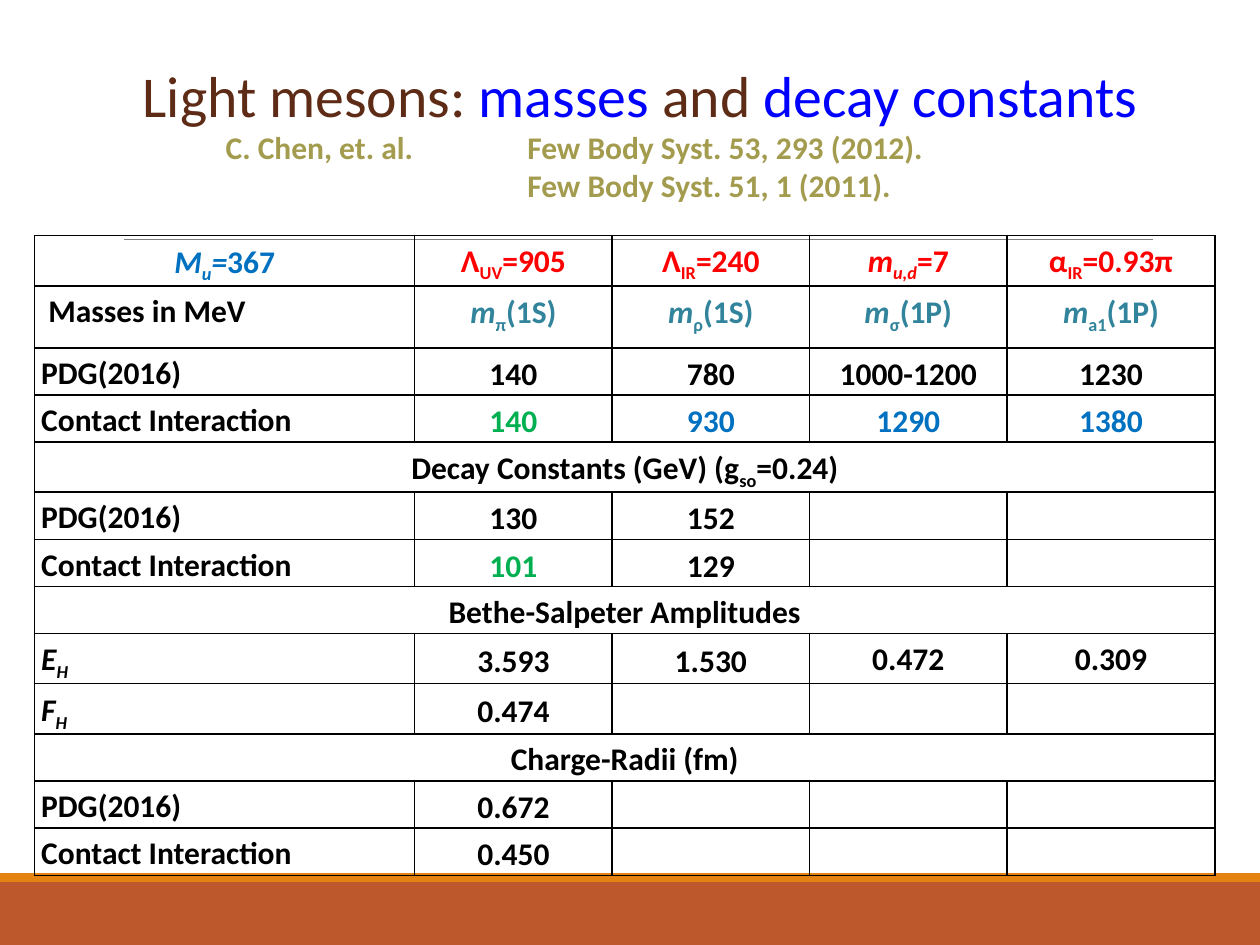
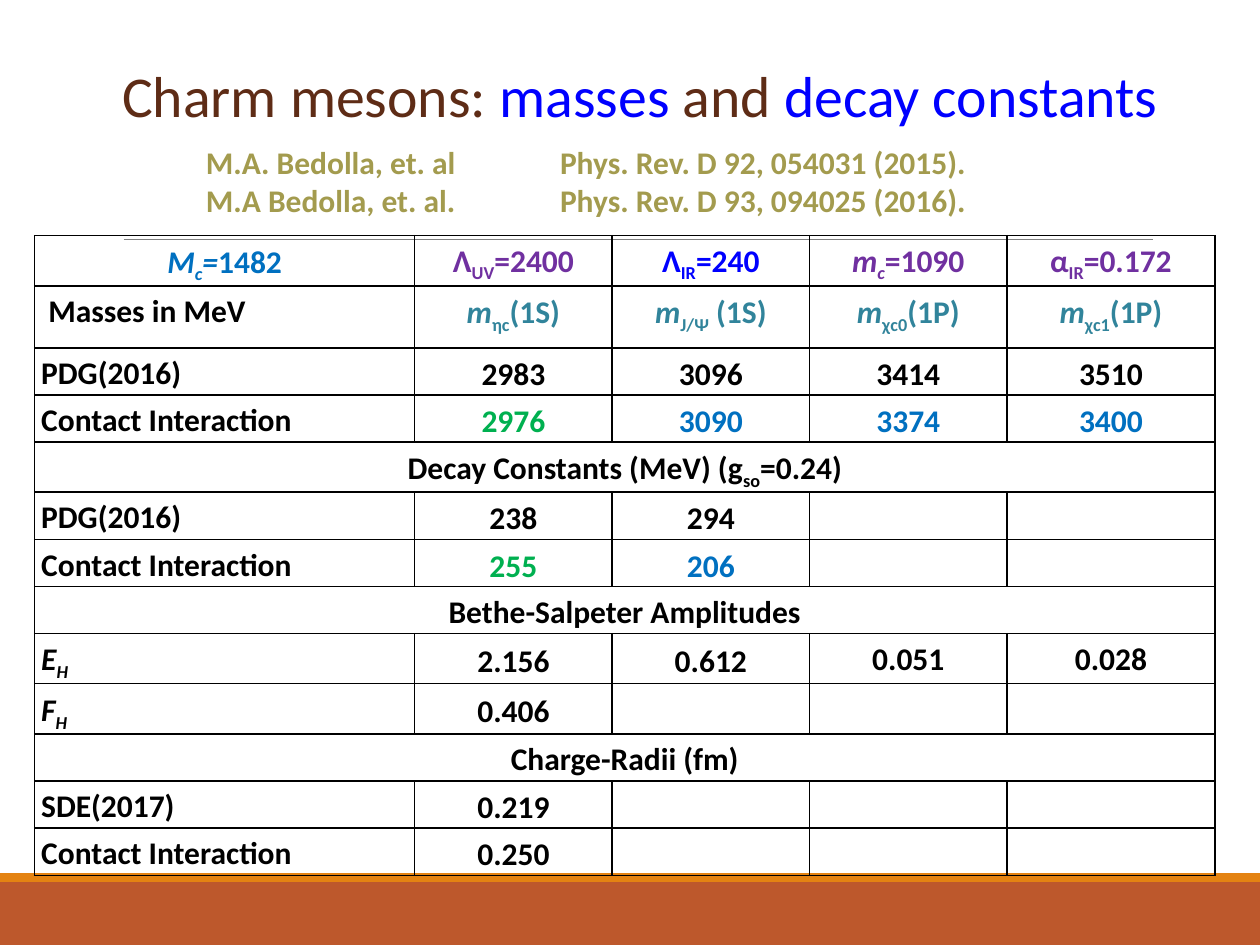
from lxml import etree
from pptx import Presentation
from pptx import util as u
from pptx.dml.color import RGBColor
from pptx.enum import shapes, text
from pptx.oxml.ns import qn

FONT = "Calibri"
BLACK, GREEN, BLUE, TEAL = "000000", "00B050", "0070C0", "31849B"
RED, PURPLE, PURE_BLUE = "FF0000", "7030A0", "0000FF"
BROWN, OLIVE, RUST, ORANGE, GRAY = "5E2C16", "A39B4E", "BD582C", "E48312", "808080"

BANDS = [(17.78, 1.27, RUST), (17.6, 0.18, ORANGE)]
COLS = [7.66, 3.98, 3.98, 3.98, 4.19]
ROWS = [0.99, 1.25] + [0.95] * 11
PARAMETERS, STATES, AMPLITUDES = 0, 1, 8

SLIDES = [
    {
        "family": "Light",
        "references": ["C. Chen, et. al.\tFew Body Syst. 53, 293 (2012).",
                       "\tFew Body Syst. 51, 1 (2011)."],
        "reference_box": (4.3, 2.46, 20.8, 2.57),
        "reference_tab": 6.08,
        "colours": {0: [BLUE, RED, RED, RED, RED],
                    3: [BLACK, GREEN, BLUE, BLUE, BLUE],
                    6: [BLACK, GREEN, BLACK]},
        "rows": [
            ["~M|u|=~367", "Λ|UV|=905", "Λ|IR|=240", "~m|u,d|~=7", "α|IR|=0.93π"],
            [" Masses in MeV", "~m~|π|(1S)", "~m~|ρ|(1S)", "~m~|σ|(1P)", "~m~|a1|(1P)"],
            ["PDG(2016)", "140", "780", "1000-1200", "1230"],
            ["Contact Interaction", "140", "930", "1290", "1380"],
            ["Decay Constants (GeV) (g|so|=0.24)"],
            ["PDG(2016)", "130", "152"],
            ["Contact Interaction", "101", "129"],
            ["Bethe-Salpeter Amplitudes"],
            ["~E|H|", "3.593", "1.530", "0.472", "0.309"],
            ["~F|H|", "0.474"],
            ["Charge-Radii (fm)"],
            ["PDG(2016)", "0.672"],
            ["Contact Interaction", "0.450"],
        ],
    },
    {
        "family": "Charm",
        "references": ["M.A. Bedolla, et. al\tPhys. Rev. D 92, 054031 (2015).",
                       "M.A Bedolla, et. al.\tPhys. Rev. D 93, 094025 (2016)."],
        "reference_box": (3.9, 2.76, 21.2, 2.57),
        "reference_tab": 7.14,
        "colours": {0: [BLUE, PURPLE, PURE_BLUE, PURPLE, PURPLE],
                    3: [BLACK, GREEN, BLUE, BLUE, BLUE],
                    6: [BLACK, GREEN, BLUE]},
        "rows": [
            ["~M|c|=~1482", "Λ|UV|=2400", "Λ|IR|=240", "~m|c|~=1090", "α|IR|=0.172"],
            [" Masses in MeV", "~m~|ηc|(1S)", "~m~|J/Ψ| (1S)", "~m~|χc0|(1P)",
             "~m~|χc1|(1P)"],
            ["PDG(2016)", "2983", "3096", "3414", "3510"],
            ["Contact Interaction", "2976", "3090", "3374", "3400"],
            ["Decay Constants (MeV) (g|so|=0.24)"],
            ["PDG(2016)", "238", "294"],
            ["Contact Interaction", "255", "206"],
            ["Bethe-Salpeter Amplitudes"],
            ["~E|H|", "2.156", "0.612", "0.051", "0.028"],
            ["~F|H|", "0.406"],
            ["Charge-Radii (fm)"],
            ["SDE(2017)", "0.219"],
            ["Contact Interaction", "0.250"],
        ],
    },
]


def rgb(colour):
    return RGBColor.from_string(colour)


def cm(*values):
    return [u.Cm(v) for v in values]


def add_run(p, content, size, colour, bold=False):
    r = p.add_run()
    r.text = content
    r.font.name, r.font.size, r.font.bold = FONT, u.Pt(size), bold
    r.font.color.rgb = rgb(colour)
    return r


def add_marked_runs(p, content, colour):
    italic = False
    for i, level_part in enumerate(content.split("|")):
        for j, piece in enumerate(level_part.split("~")):
            if j:
                italic = not italic
            if piece:
                r = add_run(p, piece, 18, colour, True)
                if italic:
                    r.font.italic = True
                if i % 2:
                    r.font._element.set("baseline", "-25000")


def add_frame(s):
    for top, height, colour in BANDS:
        sp = s.shapes.add_shape(shapes.MSO_SHAPE.RECTANGLE, *cm(0, top, 25.4, height))
        sp.shadow.inherit = False
        sp.fill.solid()
        sp.fill.fore_color.rgb = rgb(colour)
        sp.line.fill.background()
    rule = s.shapes.add_connector(shapes.MSO_CONNECTOR.STRAIGHT, *cm(2.49, 4.83, 23.25, 4.83))
    rule.line.color.rgb = rgb(GRAY)
    rule.line.width = u.Pt(0.5)
    etree.SubElement(rule._element.spPr, qn("a:effectLst"))


def add_text_box(s, box):
    tf = s.shapes.add_textbox(*cm(*box)).text_frame
    tf.word_wrap = True
    return tf


def add_title(s, family):
    tf = add_text_box(s, (1.05, 0.61, 23.7, 2.11))
    tf.vertical_anchor = text.MSO_ANCHOR.BOTTOM
    p = tf.paragraphs[0]
    p.alignment = text.PP_ALIGN.CENTER
    for content, colour in [(f"{family} mesons: ", BROWN), ("masses", PURE_BLUE),
                            (" and ", BROWN), ("decay constants", PURE_BLUE)]:
        add_run(p, content, 33, colour)


def add_references(s, lines, box, tab):
    tf = add_text_box(s, box)
    for i, line in enumerate(lines):
        p = tf.add_paragraph() if i else tf.paragraphs[0]
        tabs = etree.SubElement(p._p.get_or_add_pPr(), qn("a:tabLst"))
        etree.SubElement(tabs, qn("a:tab"), pos=str(u.Cm(tab)), algn="l")
        add_run(p, line, 18, OLIVE, True)


def set_borders(cell):
    tc_pr = cell._tc.get_or_add_tcPr()
    for i, side in enumerate(("lnL", "lnR", "lnT", "lnB")):
        ln = etree.Element(qn(f"a:{side}"), w=str(u.Pt(1)))
        fill = etree.SubElement(ln, qn("a:solidFill"))
        etree.SubElement(fill, qn("a:srgbClr"), val=BLACK)
        tc_pr.insert(i, ln)


def fill_cell(cell, content, colour, centred, middle, inset):
    cell.fill.background()
    set_borders(cell)
    cell.margin_left = cell.margin_right = u.Cm(0.13 if inset else 0)
    cell.margin_top = u.Cm(0.02 if inset else 0)
    cell.margin_bottom = 0
    cell.vertical_anchor = text.MSO_ANCHOR.MIDDLE if middle else text.MSO_ANCHOR.TOP
    if content:
        p = cell.text_frame.paragraphs[0]
        p.alignment = text.PP_ALIGN.CENTER if centred else text.PP_ALIGN.LEFT
        p.line_spacing = 1.15
        p.space_after = u.Pt(10)
        add_marked_runs(p, content, colour)


def add_meson_table(s, rows, colours):
    table = s.shapes.add_table(len(ROWS), len(COLS),
                               *cm(0.7, 4.75, sum(COLS), sum(ROWS))).table
    table.first_row = table.horz_banding = False
    for column, width in zip(table.columns, COLS):
        column.width = u.Cm(width)
    for i, (row, height) in enumerate(zip(rows, ROWS)):
        table.rows[i].height = u.Cm(height)
        heading = len(row) == 1
        default = [BLACK] + [TEAL if i == STATES else BLACK] * 4
        row_colours = colours.get(i, default)
        for j in range(len(COLS)):
            content = row[j] if j < len(row) else ""
            colour = row_colours[j] if content else BLACK
            centred = heading or j > 0 or i == PARAMETERS
            middle = i > STATES and j > 0 and not (i == AMPLITUDES and j > 2)
            fill_cell(table.cell(i, j), content, colour, centred, middle,
                      inset=i != PARAMETERS or j == 0)
        if heading:
            table.cell(i, 0).merge(table.cell(i, len(COLS) - 1))


def main():
    prs = Presentation()
    prs.slide_width, prs.slide_height = cm(25.4, 19.05)
    for data in SLIDES:
        s = prs.slides.add_slide(prs.slide_layouts[6])
        add_frame(s)
        add_meson_table(s, data["rows"], data["colours"])
        add_references(s, data["references"], data["reference_box"], data["reference_tab"])
        add_title(s, data["family"])
    prs.save("out.pptx")


if __name__ == "__main__":
    main()
